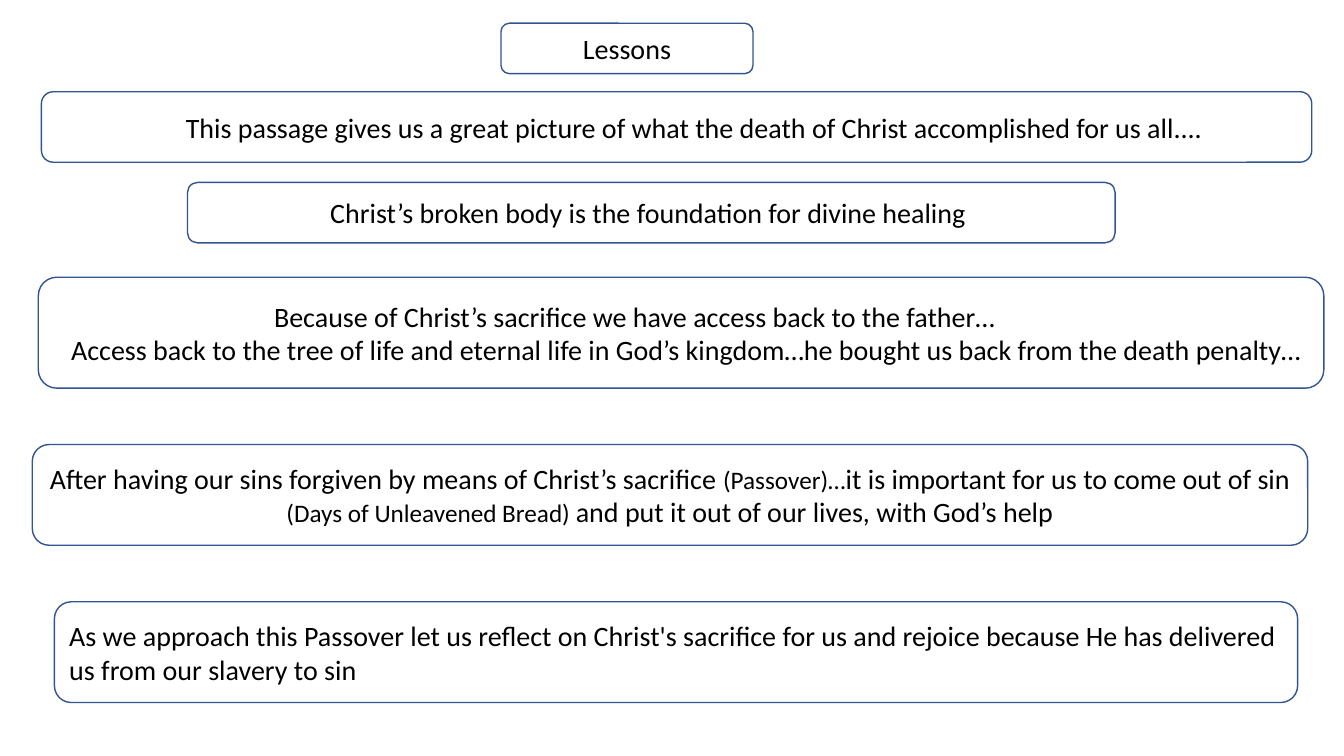
from pptx import Presentation, util as u
from pptx.dml.color import RGBColor
from pptx.enum import shapes, text

WHITE = RGBColor(0xFF, 0xFF, 0xFF)
BLACK = RGBColor(0x00, 0x00, 0x00)
BLUE = RGBColor(0x32, 0x54, 0x91)
LEFT, CENTER = text.PP_ALIGN.LEFT, text.PP_ALIGN.CENTER
MAIN, ASIDE = 20, 18  # text sizes in points

# Lessons: (left, top, width, height) in percent of the slide, alignment,
# then paragraphs as (indent in percent of slide width, [(words, size), ...])
LESSONS = [
    ((37.28, 3.07, 18.75, 6.67), CENTER, [(0, [("Lessons", MAIN)])]),
    ((3.08, 12.13, 94.52, 9.33), LEFT, [
        (9.75, [("This passage gives us a great picture of what the death of Christ "
                 "accomplished for us all....", MAIN)])]),
    ((13.95, 24.13, 69.02, 8), CENTER, [
        (0, [("Christ’s broken body is the foundation for divine healing ", MAIN)])]),
    ((2.85, 36.67, 95.65, 14.67), LEFT, [
        (16.4, [("Because of Christ’s sacrifice we have access back to the father…", MAIN)]),
        (1.3, [("Access back to the tree of life and eternal life in God’s kingdom…"
                "he bought us back from the death penalty…", MAIN)])]),
    ((2.4, 58.8, 94.9, 13.33), CENTER, [
        (0, [("After having our sins forgiven by means of Christ’s sacrifice ", MAIN),
             ("(Passover)…", ASIDE),
             ("it is important for us to come out of sin ", MAIN),
             ("(Days of Unleavened Bread) ", ASIDE),
             ("and put it out of our lives, with God’s help", MAIN)])]),
    ((4.05, 79.6, 92.5, 13.33), LEFT, [
        (0, [("As we approach this Passover let us reflect on Christ's sacrifice for us "
              "and rejoice because He has delivered us from our slavery to sin", MAIN)])]),
]

FRAME_FORMAT = {"word_wrap": True, "vertical_anchor": text.MSO_ANCHOR.MIDDLE}


def apply_format(target, values):
    for name, value in values.items():
        setattr(target, name, value)


def add_lesson(slide, box, alignment, paragraphs):
    left, top, width, height = box
    shape = slide.shapes.add_shape(
        shapes.MSO_SHAPE.ROUNDED_RECTANGLE,
        share(left, WIDTH), share(top, HEIGHT), share(width, WIDTH), share(height, HEIGHT))
    shape.shadow.inherit = False
    shape.fill.solid()
    shape.fill.fore_color.rgb = WHITE
    shape.line.color.rgb = BLUE
    shape.line.width = u.Pt(1)

    # Text
    frame = shape.text_frame
    apply_format(frame, FRAME_FORMAT)
    for number, (indent, runs) in enumerate(paragraphs):
        paragraph = frame.add_paragraph() if number else frame.paragraphs[0]
        paragraph.alignment = alignment
        if indent:
            paragraph._p.get_or_add_pPr().set("marL", str(share(indent, WIDTH)))
        for words, size in runs:
            run = paragraph.add_run()
            run.text = words
            apply_format(run.font, {"name": "Calibri", "size": u.Pt(size)})
            run.font.color.rgb = BLACK


def share(percent, length):
    return int(length * percent / 100)


# Slide
WIDTH, HEIGHT = u.Inches(13.33), u.Inches(7.5)
presentation = Presentation()
apply_format(presentation, {"slide_width": WIDTH, "slide_height": HEIGHT})
lessons_slide = presentation.slides.add_slide(presentation.slide_layouts[6])
for lesson in LESSONS:
    add_lesson(lessons_slide, *lesson)
presentation.save("out.pptx")
